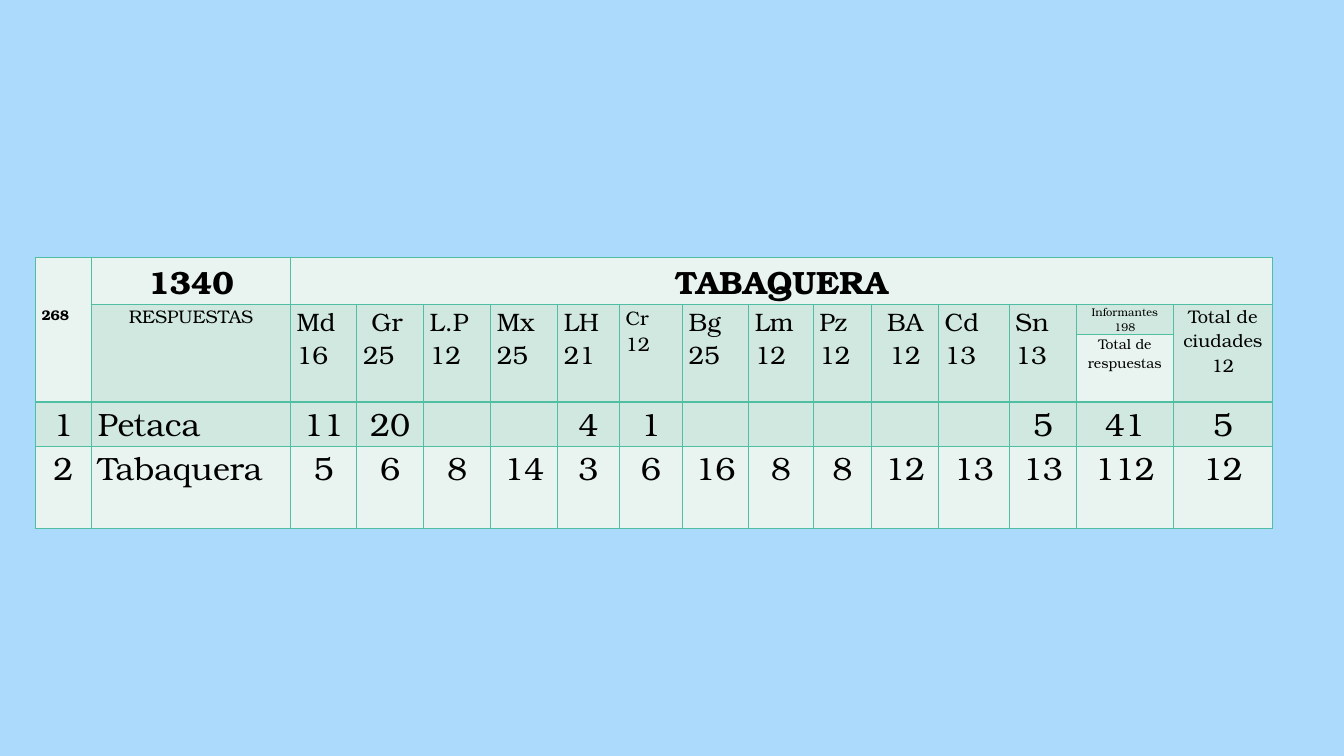
from lxml import etree
from pptx import Presentation
from pptx.dml.color import RGBColor
from pptx.enum.text import PP_ALIGN
from pptx.oxml.ns import qn
from pptx.util import Pt

LEFT, CENTER = PP_ALIGN.LEFT, PP_ALIGN.CENTER
FONT = "TeX Gyre Bonum"
PALE, GREEN, BORDER = "E9F4F0", "D0E8E0", "50BEA3"
COLUMN_WIDTHS = [40.3, 142, 47.4, 47.6, 48, 47.8, 44.2, 45,
                 47.3, 46.1, 41.9, 47.6, 50.6, 48, 69.2, 70.8]
ROW_HEIGHTS = [33.5, 21.5, 47.5, 31.7, 59]
CITIES = [
    (["Md 16"], 18, LEFT), (["Gr", "25"], 18, LEFT), (["L.P 12"], 18, LEFT),
    (["Mx 25"], 18, LEFT), (["LH 21"], 18, LEFT), (["Cr", "12"], 14, LEFT),
    (["Bg 25"], 18, LEFT), (["Lm 12"], 18, LEFT), (["Pz 12"], 18, LEFT),
    (["BA", "12"], 18, CENTER), (["Cd 13"], 18, LEFT), (["Sn", "13"], 18, LEFT),
]
ANSWERS = [
    ["1", "Petaca", "11", "20", "", "", "4", "1", "", "", "", "", "", "5", "41", "5"],
    ["2", "Tabaquera", "5", "6", "8", "14", "3", "6", "16", "8", "8", "12", "13", "13",
     "112", "12"],
]


def color(value):
    return RGBColor.from_string(value)


def write(cell, lines, size, align=CENTER, bold=False):
    frame = cell.text_frame
    for number, line in enumerate(lines):
        para = frame.add_paragraph() if number else frame.paragraphs[0]
        para.alignment = align
        span = para.add_run()
        span.text = line
        span.font.color.rgb = color("000000")
        for name, value in {"name": FONT, "size": Pt(size), "bold": bold}.items():
            setattr(span.font, name, value)


deck = Presentation()
deck.slide_width, deck.slide_height = Pt(960), Pt(540)
slide = deck.slides.add_slide(deck.slide_layouts[6])
slide.background.fill.solid()
slide.background.fill.fore_color.rgb = color("ABDAFC")

table = slide.shapes.add_table(
    len(ROW_HEIGHTS), len(COLUMN_WIDTHS), Pt(25.2), Pt(183.8),
    Pt(sum(COLUMN_WIDTHS)), Pt(sum(ROW_HEIGHTS))).table
table.first_row = table.horz_banding = False
for column, width in zip(table.columns, COLUMN_WIDTHS):
    column.width = Pt(width)
for row, height in zip(table.rows, ROW_HEIGHTS):
    row.height = Pt(height)

# Borders, margins and fills
MARGINS = {"margin_left": 4.5, "margin_right": 4.5, "margin_top": 0, "margin_bottom": 0}
for row_index, row in enumerate(table.rows):
    for column_index, cell in enumerate(row.cells):
        for name, value in MARGINS.items():
            setattr(cell, name, Pt(value))
        properties = cell._tc.get_or_add_tcPr()
        for side in ("a:lnL", "a:lnR", "a:lnT", "a:lnB"):
            line = etree.SubElement(properties, qn(side), w=str(Pt(1)))
            line_fill = etree.SubElement(line, qn("a:solidFill"))
            etree.SubElement(line_fill, qn("a:srgbClr"), val=BORDER)
        green = row_index in (1, 3) or (row_index == 2 and column_index != 14)
        if row_index < 3 and column_index == 0:
            green = False
        cell.fill.solid()
        cell.fill.fore_color.rgb = color(GREEN if green else PALE)

# Heading cells
table.cell(0, 0).merge(table.cell(2, 0))
table.cell(0, 2).merge(table.cell(0, 15))
for column_index in [*range(1, 14), 15]:
    table.cell(1, column_index).merge(table.cell(2, column_index))

table.cell(0, 0).margin_top = Pt(33.5)
write(table.cell(0, 0), ["268"], 10, LEFT, True)
write(table.cell(0, 1), ["1340"], 23, bold=True)
write(table.cell(0, 2), ["TABAQUERA"], 23, bold=True)
write(table.cell(1, 1), ["RESPUESTAS"], 13)
for column_index, (lines, size, align) in enumerate(CITIES, 2):
    write(table.cell(1, column_index), lines, size, align)
indented_para = table.cell(1, 3).text_frame.paragraphs[0]
indented_para._p.get_or_add_pPr().set("marL", str(Pt(6)))
write(table.cell(1, 14), ["Informantes 198"], 8)
write(table.cell(2, 14), ["Total de respuestas"], 10)
write(table.cell(1, 15), ["Total de ciudades", "12"], 13)

# Answer counts
for row_index, answers in enumerate(ANSWERS, 3):
    for column_index, answer in enumerate(answers):
        if answer:
            write(table.cell(row_index, column_index), [answer], 23,
                  LEFT if column_index == 1 else CENTER)

deck.save("out.pptx")
